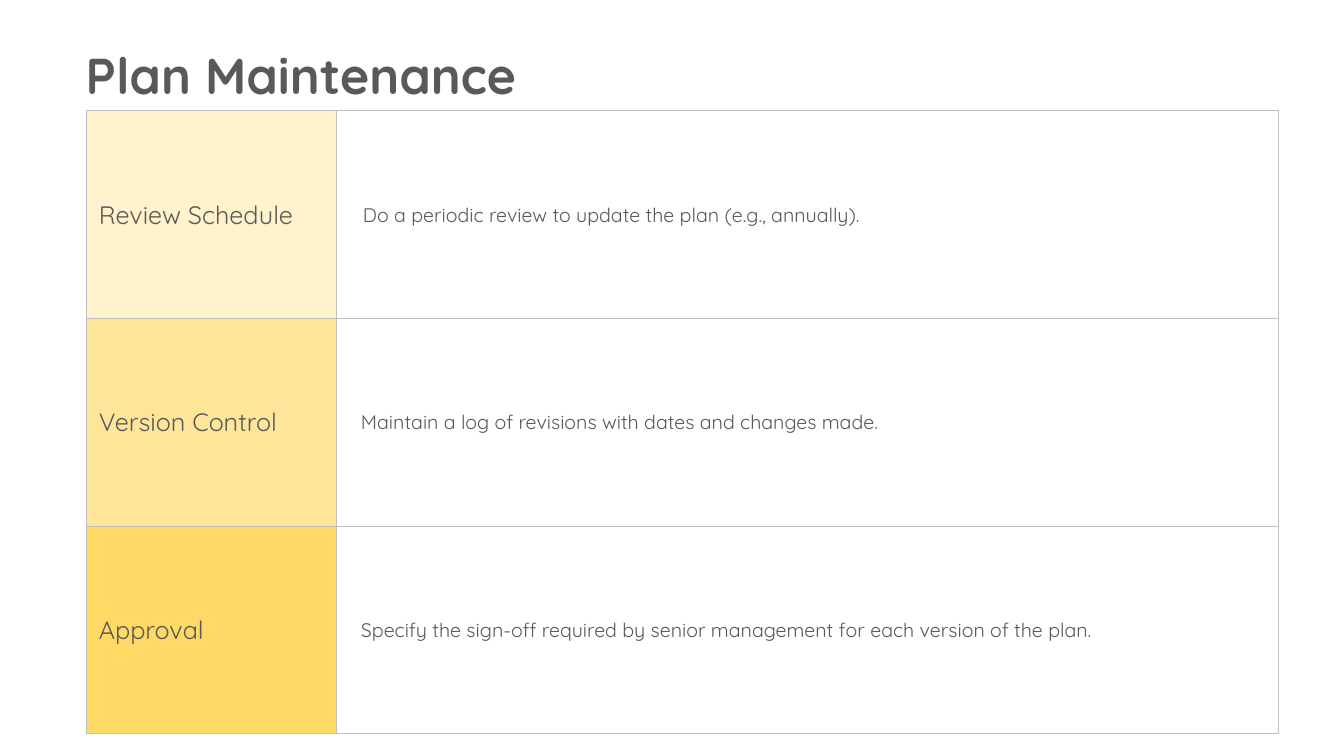
from lxml import etree
from pptx import Presentation
from pptx.dml.color import RGBColor
from pptx.enum.text import MSO_ANCHOR, PP_ALIGN
from pptx.oxml.ns import qn
from pptx.util import Inches, Pt

TEXT_COLOR, BORDER_COLOR = "595959", "BFBFBF"
LABEL_WIDTH, DETAIL_WIDTH, ROW_HEIGHT = 2.48, 9.34, 2.06

# label, label fill, detail, left inset of the detail
maintenance_steps = [
    ("Review Schedule", "FFF2CC",
     "Do a periodic review to update the plan (e.g., annually).", 0.07),
    ("Version Control", "FFE599",
     "Maintain a log of revisions with dates and changes made.", 0.05),
    ("Approval", "FFD966",
     "Specify the sign-off required by senior management for each version of the plan.", 0.05),
]


def write(frame, text, size, bold=False, indent=0):
    paragraph = frame.paragraphs[0]
    paragraph.alignment = PP_ALIGN.LEFT
    paragraph._p.get_or_add_pPr().set("marL", str(Inches(indent)))
    run = paragraph.add_run()
    run.text = text
    run.font.name = "Quicksand"
    run.font.size = Pt(size)
    run.font.bold = bold
    run.font.color.rgb = RGBColor.from_string(TEXT_COLOR)


def add_borders(cell):
    properties = cell._tc.get_or_add_tcPr()
    for side in ("a:lnL", "a:lnR", "a:lnT", "a:lnB"):
        line = etree.SubElement(properties, qn(side), w=str(Pt(1)))
        fill = etree.SubElement(line, qn("a:solidFill"))
        etree.SubElement(fill, qn("a:srgbClr"), val=BORDER_COLOR)


presentation = Presentation()
presentation.slide_width = Inches(13.33)
presentation.slide_height = Inches(7.5)
slide = presentation.slides.add_slide(presentation.slide_layouts[5])

title = slide.shapes.title
title.left, title.top = Inches(0.75), Inches(0.39)
title.width, title.height = Inches(11), Inches(0.71)
title.text_frame.vertical_anchor = MSO_ANCHOR.TOP
write(title.text_frame, "Plan Maintenance", size=36, bold=True)

steps_table = slide.shapes.add_table(
    len(maintenance_steps), 2, Inches(0.86), Inches(1.1),
    Inches(LABEL_WIDTH + DETAIL_WIDTH), Inches(ROW_HEIGHT * len(maintenance_steps))).table
steps_table.first_row = steps_table.horz_banding = False
steps_table.columns[0].width = Inches(LABEL_WIDTH)
steps_table.columns[1].width = Inches(DETAIL_WIDTH)

for row, (label, label_fill, detail, detail_inset) in zip(steps_table.rows, maintenance_steps):
    row.height = Inches(ROW_HEIGHT)
    cell_contents = [
        (label, label_fill, 18, 0.07, 0.05),
        (detail, "FFFFFF", 14, 0.19, detail_inset),
    ]
    for cell, (text, fill, size, indent, inset) in zip(row.cells, cell_contents):
        cell.margin_left = cell.margin_right = Inches(inset)
        cell.margin_top = cell.margin_bottom = 0
        cell.vertical_anchor = MSO_ANCHOR.MIDDLE
        add_borders(cell)
        cell.fill.solid()
        cell.fill.fore_color.rgb = RGBColor.from_string(fill)
        write(cell.text_frame, text, size=size, indent=indent)

presentation.save("out.pptx")
